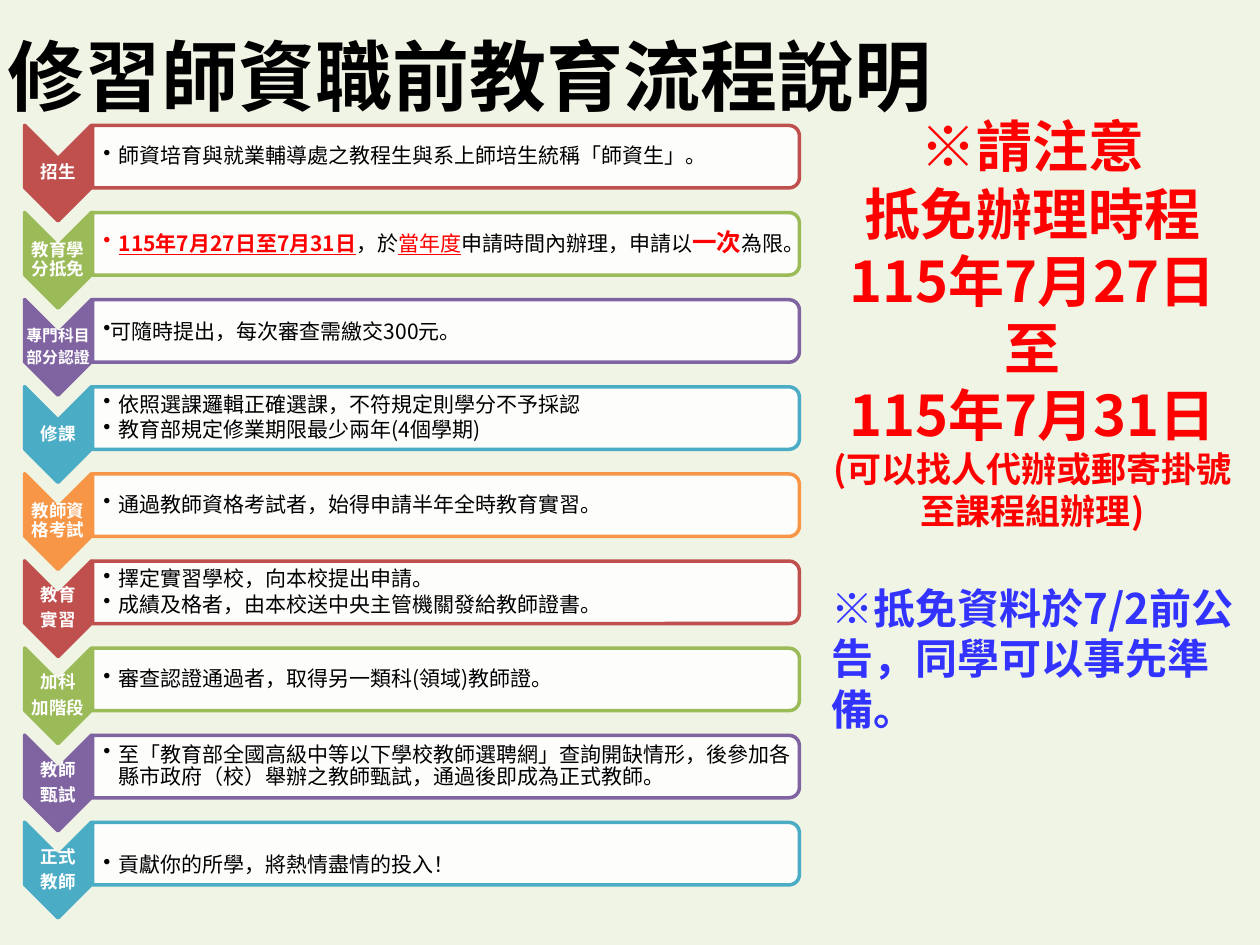
from dataclasses import dataclass, replace
from typing import NamedTuple

from lxml.etree import SubElement
from pptx import Presentation
from pptx.dml.color import RGBColor
from pptx.enum.shapes import MSO_SHAPE
from pptx.enum.text import MSO_ANCHOR, MSO_AUTO_SIZE, PP_ALIGN
from pptx.oxml.ns import qn
from pptx.util import Cm, Pt


@dataclass(frozen=True)
class Theme:
    sans: str = "Noto Sans CJK SC"
    trad: str = "Noto Sans CJK TC"
    back: str = "EFF4E5"
    black: str = "000000"
    white: str = "FFFFFF"
    red: str = "FF0000"
    blue: str = "3333FF"
    brick: str = "C0504D"
    green: str = "9BBB59"
    plum: str = "8064A2"
    teal: str = "4BACC6"
    amber: str = "F79646"
    title: int = 44
    head: int = 32
    note: int = 24
    small: int = 20
    stress: int = 14
    body: int = 12
    tag: int = 10
    tiny: int = 9


T = Theme()


@dataclass(frozen=True)
class Look:
    size: int
    color: str
    bold: bool = False
    under: bool = False
    font: str = T.sans


class Part(NamedTuple):
    text: str
    look: Look


@dataclass(frozen=True)
class Step:
    tag: list[str]
    color: str
    lines: list[list[Part]]
    size: int = T.tag
    tight: bool = True   # hanging bullets with reduced line spacing
    drop: float = 0      # cm the text sits below the middle of its bar


class Spot(NamedTuple):
    """Centre and size in cm."""
    x: float
    y: float
    wide: float
    high: float

    def frame(self):
        return (Cm(self.x - self.wide / 2), Cm(self.y - self.high / 2),
                Cm(self.wide), Cm(self.high))


# Text looks
PLAIN = Look(T.body, T.black)
STOP = replace(PLAIN, font=T.trad)
DATE = Look(T.body, T.red, bold=True, under=True)
YEAR = replace(DATE, bold=False)
ONCE = Look(T.stress, T.red, bold=True)
HEAD = Look(T.head, T.red, bold=True)


def line(text: str, stop: bool = False) -> list[Part]:
    """One bullet; stop adds a full stop in the traditional font."""
    return [Part(text, PLAIN)] + ([Part("。", STOP)] if stop else [])


STEPS = [
    Step(["招生"], T.brick,
         [line("師資培育與就業輔導處之教程生與系上師培生統稱「師資生」", True)]),
    Step(["教育學分抵免"], T.green,
         [[Part("115年7月27日至7月31日", DATE), Part("，於", PLAIN),
           Part("當年度", YEAR), Part("申請時間內辦理，申請以", PLAIN),
           Part("一次", ONCE), *line("為限", True)]]),
    Step(["專門科目", "部分認證"], T.plum,
         [line("可隨時提出，每次審查需繳交300元", True)],
         size=T.tiny, tight=False),
    Step(["修課"], T.teal,
         [line("依照選課邏輯正確選課，不符規定則學分不予採認"),
          line("教育部規定修業期限最少兩年(4個學期)")]),
    Step(["教師資格考試"], T.amber,
         [line("通過教師資格考試者，始得申請半年全時教育實習。")]),
    Step(["教育", "實習"], T.brick,
         [line("擇定實習學校，向本校提出申請", True),
          line("成績及格者，由本校送中央主管機關發給教師證書。")]),
    Step(["加科", "加階段"], T.green,
         [line("審查認證通過者，取得另一類科(領域)教師證", True)]),
    Step(["教師", "甄試"], T.plum,
         [line("至「教育部全國高級中等以下學校教師選聘網」查詢開缺情形，"
               "後參加各縣市政府（校）舉辦之教師甄試，通過後即成為正式教師。")]),
    Step(["正式", "教師"], T.teal,
         [line("貢獻你的所學，將熱情盡情的投入！")], drop=0.25),
]

NOTES = [Part(text, HEAD) for text in
         ("※請注意", "抵免辦理時程", "115年7月27日", "至", "115年7月31日")]
NOTES += [
    Part("(可以找人代辦或郵寄掛號至課程組辦理)", replace(HEAD, size=T.small)),
    Part("※抵免資料於7/2前公告，同學可以事先準備。",
         Look(T.note, T.blue, bold=True)),
]


def style(run, look: Look) -> None:
    font = run.font
    font.size, font.bold, font.underline = Pt(look.size), look.bold, look.under
    font.color.rgb = RGBColor.from_string(look.color)
    font.name = look.font
    SubElement(font._element, qn("a:ea"), typeface=look.font)


def write(para, parts: list[Part]) -> None:
    for part in parts:
        run = para.add_run()
        run.text = part.text
        style(run, part.look)


def bullet(para, hang: float) -> None:
    props = para._p.get_or_add_pPr()
    props.set("marL", str(Cm(hang)))
    props.set("indent", str(-Cm(hang)))
    SubElement(props, qn("a:buChar"), char="•")


def solid(shape, fill: str, edge: str, alpha: int = 100) -> None:
    shape.shadow.inherit = False
    shape.fill.solid()
    shape.fill.fore_color.rgb = RGBColor.from_string(fill)
    shape.line.color.rgb = RGBColor.from_string(edge)
    shape.line.width = Pt(2)
    if alpha < 100:
        tint = shape.fill._xPr.find(".//" + qn("a:srgbClr"))
        SubElement(tint, qn("a:alpha"), val=str(alpha * 1000))


def label(shapes, spot: Spot, left: float = 0.02):
    frame = shapes.add_textbox(*spot.frame()).text_frame
    frame.word_wrap = True
    frame.vertical_anchor = MSO_ANCHOR.MIDDLE
    frame.margin_left = Cm(left)
    frame.margin_top = frame.margin_right = frame.margin_bottom = Cm(0.02)
    return frame


def draw(shapes, step: Step, top: float) -> None:
    """One row; top is the middle of its bar in cm."""
    # Arrow and its tag
    mid = top + 0.33
    arrow = shapes.add_shape(MSO_SHAPE.CHEVRON,
                             *Spot(1.17, mid, 1.93, 1.35).frame())
    arrow.rotation = 90
    solid(arrow, step.color, step.color)
    frame = label(shapes, Spot(1.17, mid, 1.35, 0.58))
    frame.text = "\n".join(step.tag)
    for para in frame.paragraphs:
        para.alignment = PP_ALIGN.CENTER
        para.line_spacing = 0.9
        para.space_after = Pt(step.size * 0.35)
        style(para.runs[0], Look(step.size, T.white, bold=True))

    # Bar and its bullets
    bar = shapes.add_shape(MSO_SHAPE.ROUND_2_SAME_RECTANGLE,
                           *Spot(8.99, top, 1.26, 14.25).frame())
    bar.rotation = 90
    solid(bar, T.white, step.color, 90)
    frame = label(shapes, Spot(8.94, top + step.drop, 14.17, 1.14), 0.23)
    for index, parts in enumerate(step.lines):
        para = frame.add_paragraph() if index else frame.paragraphs[0]
        para.level = 1
        if step.tight:
            para.line_spacing = 0.9
            para.space_after = Pt(T.body * 0.15)
        bullet(para, 0.31 if step.tight else 0)
        write(para, parts)


def main() -> None:
    deck = Presentation()
    deck.slide_width, deck.slide_height = Cm(25.4), Cm(19.05)
    slide = deck.slides.add_slide(deck.slide_layouts[5])
    slide.background.fill.solid()
    slide.background.fill.fore_color.rgb = RGBColor.from_string(T.back)

    # Title
    title = slide.shapes.title
    title.left, title.top = Cm(-0.1), Cm(-0.08)
    title.width, title.height = Cm(22.86), Cm(3.18)
    title.text_frame.text = "修習師資職前教育流程說明"
    title.text_frame.auto_size = MSO_AUTO_SIZE.NONE
    title.text_frame.vertical_anchor = MSO_ANCHOR.MIDDLE
    para = title.text_frame.paragraphs[0]
    para.alignment = PP_ALIGN.LEFT
    style(para.runs[0], Look(T.title, T.black, bold=True))

    # Flow of steps
    flow = slide.shapes.add_group_shape()
    gap = 14.05 / (len(STEPS) - 1)
    for index, step in enumerate(STEPS):
        draw(flow.shapes, step, 3.16 + index * gap)

    # Side notice
    side = slide.shapes.add_textbox(Cm(16.51), Cm(2.13), Cm(8.61), Cm(15.29))
    frame = side.text_frame
    frame.word_wrap = True
    frame.text = "\n".join(note.text for note in NOTES)
    for para, note in zip(frame.paragraphs, NOTES):
        para.alignment = PP_ALIGN.CENTER
        style(para.runs[0], note.look)
    para.alignment = PP_ALIGN.LEFT
    para.space_before = Pt(T.note * 1.2)

    deck.save("out.pptx")


if __name__ == "__main__":
    main()
